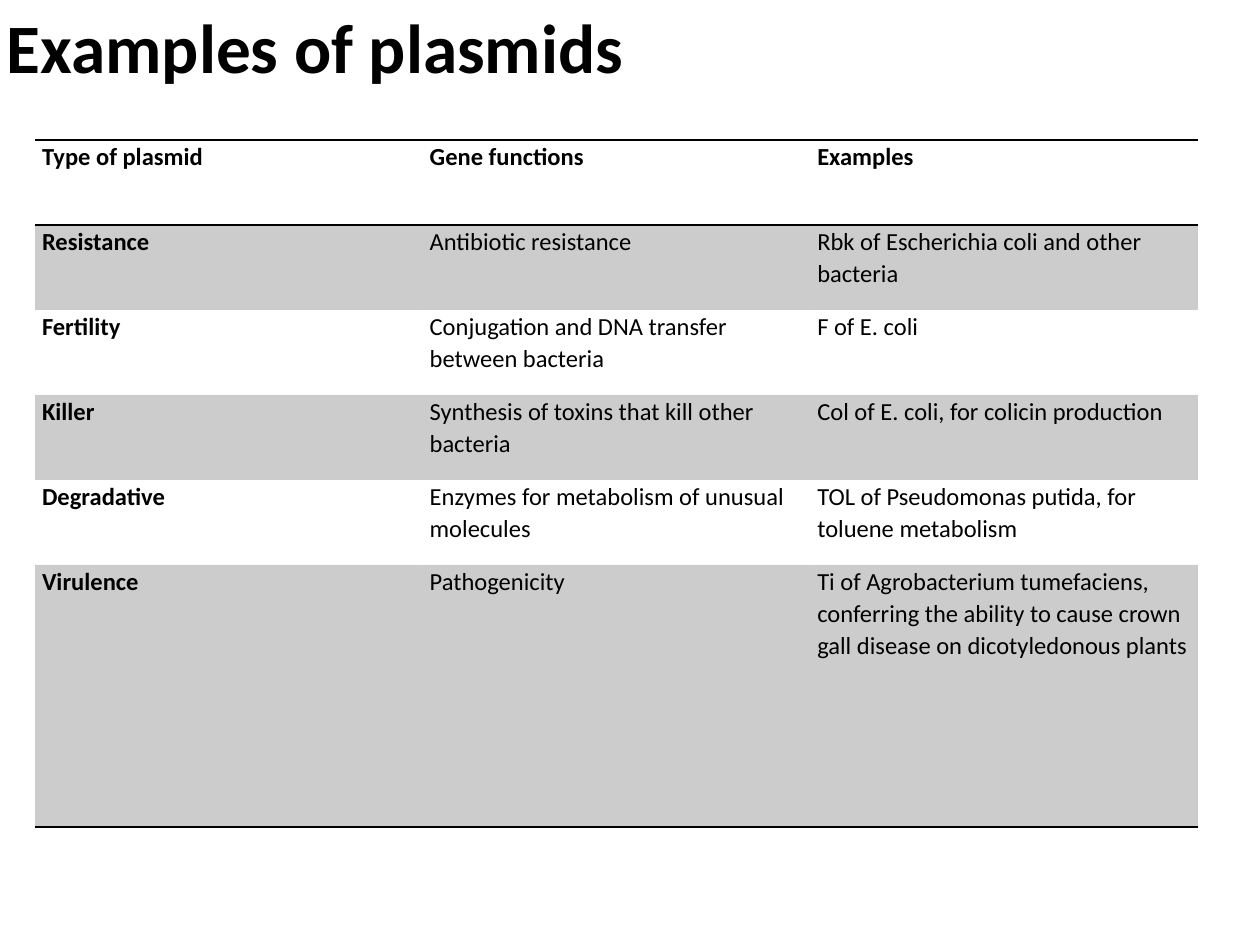
from lxml import etree
from pptx import Presentation
from pptx import util as u
from pptx.dml.color import RGBColor
from pptx.enum import text
from pptx.oxml.ns import qn

PX = 914400 / 126
COLORS = {"ink": "000000", "band": "000000"}
BAND_OPACITY = 20
NO_STYLE = "{2D5ABB26-0587-4C30-8999-92F81FD0307C}"

HEADER = ("Type of plasmid", "Gene functions", "Examples")
PLASMIDS = [
    ("Resistance", "Antibiotic resistance",
     "Rbk of Escherichia coli and other bacteria"),
    ("Fertility", "Conjugation and DNA transfer between bacteria",
     "F of E. coli"),
    ("Killer", "Synthesis of toxins that kill other bacteria",
     "Col of E. coli, for colicin production"),
    ("Degradative", "Enzymes for metabolism of unusual molecules",
     "TOL of Pseudomonas putida, for toluene metabolism"),
    ("Virulence", "Pathogenicity",
     "Ti of Agrobacterium tumefaciens, conferring the ability to cause "
     "crown gall disease on dicotyledonous plants"),
]


def px(length):
    return u.Emu(round(length * PX))


def write(frame, words, size, bold=False, spacing=1.0, color="ink"):
    paragraph = frame.paragraphs[0]
    paragraph.alignment = text.PP_ALIGN.LEFT
    paragraph.line_spacing = spacing
    run = paragraph.add_run()
    run.text = words
    run.font.name = "Calibri"
    run.font.size = u.Pt(size)
    run.font.bold = bold
    run.font.color.rgb = RGBColor.from_string(COLORS[color])


def add_title(slide, words, left, top, width, height):
    frame = slide.shapes.add_textbox(
        px(left), px(top), px(width), px(height)).text_frame
    frame.word_wrap = True
    frame.vertical_anchor = text.MSO_ANCHOR.MIDDLE
    frame.margin_left = frame.margin_right = px(7)
    frame.margin_top = frame.margin_bottom = 0
    write(frame, words, 39.6, bold=True, spacing=0.9)


def shade(cell):
    """Fill the cell with the translucent band colour."""
    cell.fill.solid()
    cell.fill.fore_color.rgb = RGBColor.from_string(COLORS["band"])
    color = cell._tc.tcPr.find(".//" + qn("a:srgbClr"))
    etree.SubElement(color, qn("a:alpha"), val=str(BAND_OPACITY * 1000))


def rule(cell, sides):
    """Draw 1 pt borders; sides are given in the order lnT, lnB."""
    properties = cell._tc.get_or_add_tcPr()
    for position, side in enumerate(sides):
        line = etree.Element(qn(f"a:{side}"), w=str(u.Pt(1)))
        fill = etree.SubElement(line, qn("a:solidFill"))
        etree.SubElement(fill, qn("a:srgbClr"), val=COLORS["ink"])
        properties.insert(position, line)


def add_plasmid_table(slide, left, top, width, row_height, last_height):
    rows = [HEADER, *PLASMIDS]
    last = len(rows) - 1
    table = slide.shapes.add_table(
        len(rows), len(HEADER), px(left), px(top), px(width),
        px(row_height * last + last_height)).table
    table.first_row = table.horz_banding = False
    table._tbl.tblPr.find(qn("a:tableStyleId")).text = NO_STYLE
    for column in table.columns:
        column.width = px(width / len(HEADER))

    for r, row in enumerate(rows):
        table.rows[r].height = px(last_height if r == last else row_height)
        for c, words in enumerate(row):
            cell = table.cell(r, c)
            cell.margin_left = cell.margin_right = px(7)
            cell.margin_top = cell.margin_bottom = 0
            write(cell.text_frame, words, 14, bold=r == 0 or c == 0,
                  spacing=1.07)
            if r % 2:
                shade(cell)
            else:
                cell.fill.background()
            if r == 0:
                rule(cell, ["lnT", "lnB"])
            elif r == last:
                rule(cell, ["lnB"])


def main():
    deck = Presentation()
    deck.slide_width, deck.slide_height = px(1260), px(945)
    slide = deck.slides.add_slide(deck.slide_layouts[6])
    add_title(slide, "Examples of plasmids", 0, 0, 1260, 103)
    add_plasmid_table(slide, 35, 140, 1163, 85, 262)
    deck.save("out.pptx")


if __name__ == "__main__":
    main()
